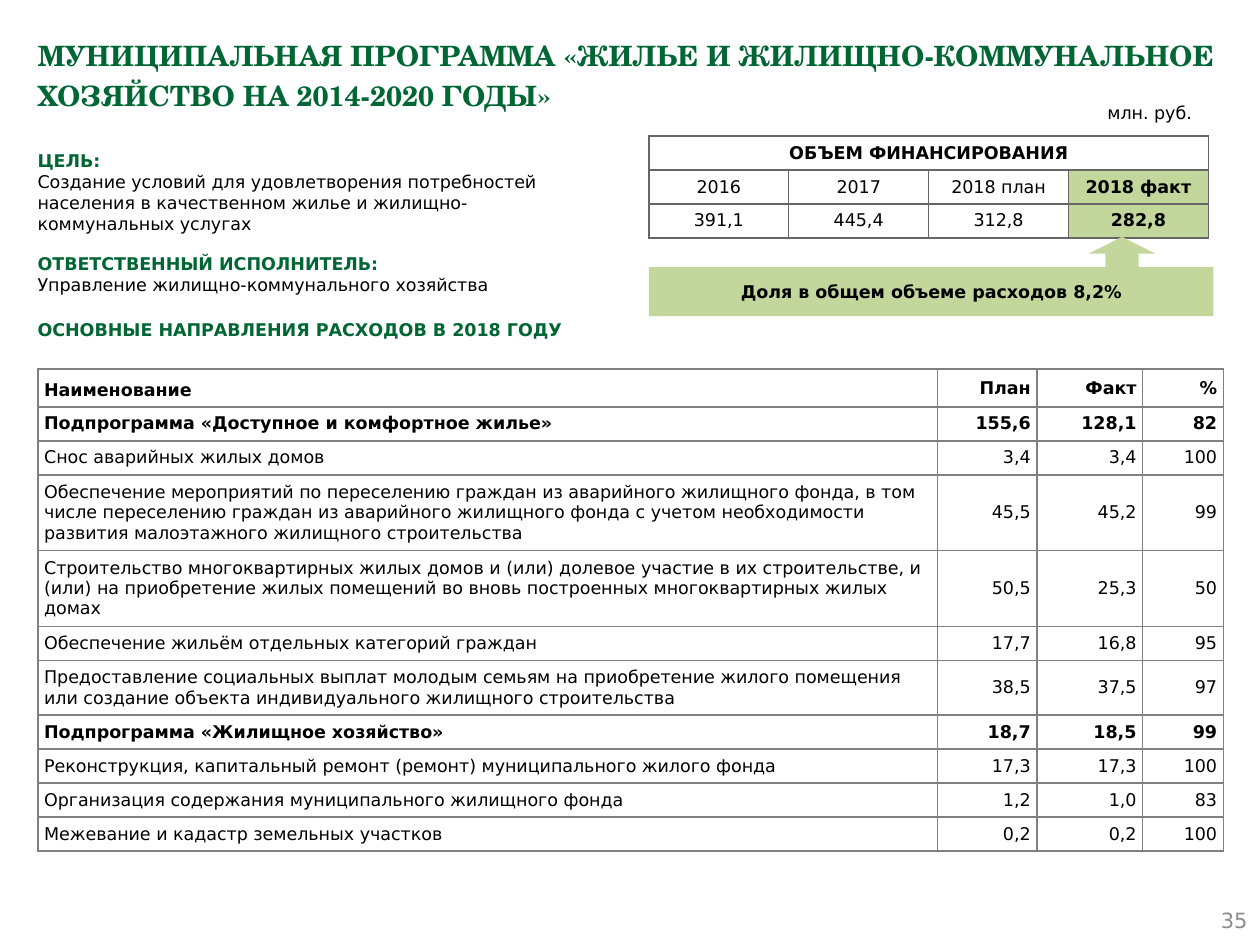
import pptx
import pptx.dml.color
import pptx.enum.shapes
import pptx.enum.text
import pptx.oxml.ns
import pptx.util
from lxml import etree

Inches = pptx.util.Inches
Pt = pptx.util.Pt
RGBColor = pptx.dml.color.RGBColor
SHAPE = pptx.enum.shapes.MSO_SHAPE
ALIGN = pptx.enum.text.PP_ALIGN
ANCHOR = pptx.enum.text.MSO_ANCHOR
qn = pptx.oxml.ns.qn

GREEN = RGBColor(0x00, 0x66, 0x33)
LIGHT_GREEN = RGBColor(0xC3, 0xD6, 0x9B)
BLACK = RGBColor(0x00, 0x00, 0x00)
PAGE_GREY = RGBColor(0x8C, 0x8C, 0x8C)
FUNDING_BORDER = RGBColor(0x66, 0x66, 0x66)
SPENDING_BORDER = RGBColor(0x80, 0x80, 0x80)

FUNDING = [
    ["ОБЪЕМ ФИНАНСИРОВАНИЯ", "", "", ""],
    ["2016", "2017", "2018 план", "2018 факт"],
    ["391,1", "445,4", "312,8", "282,8"],
]

SPENDING = [
    ("Наименование", "План", "Факт", "%"),
    ("Подпрограмма «Доступное и комфортное жилье»", "155,6", "128,1", "82"),
    ("Снос аварийных жилых домов", "3,4", "3,4", "100"),
    ("Обеспечение мероприятий по переселению граждан из аварийного жилищного фонда, "
     "в том числе переселению граждан из аварийного жилищного фонда с учетом "
     "необходимости развития малоэтажного жилищного строительства", "45,5", "45,2", "99"),
    ("Строительство многоквартирных жилых домов и (или) долевое участие в их "
     "строительстве, и (или) на приобретение жилых помещений во вновь построенных "
     "многоквартирных жилых домах", "50,5", "25,3", "50"),
    ("Обеспечение жильём отдельных категорий граждан", "17,7", "16,8", "95"),
    ("Предоставление социальных выплат молодым семьям на приобретение жилого помещения "
     "или создание объекта индивидуального жилищного строительства", "38,5", "37,5", "97"),
    ("Подпрограмма «Жилищное хозяйство»", "18,7", "18,5", "99"),
    ("Реконструкция, капитальный ремонт (ремонт) муниципального жилого фонда",
     "17,3", "17,3", "100"),
    ("Организация содержания муниципального жилищного фонда", "1,2", "1,0", "83"),
    ("Межевание и кадастр земельных участков", "0,2", "0,2", "100"),
]
SPENDING_HEIGHTS = [0.3, 0.27, 0.27, 0.6, 0.6, 0.27, 0.43, 0.27, 0.27, 0.27, 0.27]


class SlideBuilder:
    font_name = "DejaVu Sans"
    title_font = "TeX Gyre Schola"
    font_size = 10

    def __init__(self, deck):
        self.page = deck.slides.add_slide(deck.slide_layouts[5])

    def format(self, paragraph, color=BLACK, bold=False, align=ALIGN.LEFT,
               size=None, name=None, spacing=1.0):
        paragraph.alignment = align
        paragraph.line_spacing = spacing
        font = paragraph.font
        font.name = name or self.font_name
        font.size = Pt(size or self.font_size)
        font.bold = bold
        font.color.rgb = color

    def title(self, text, left, top, width, height):
        box = self.page.shapes.title
        box.left, box.top = Inches(left), Inches(top)
        box.width, box.height = Inches(width), Inches(height)
        frame = box.text_frame
        frame.text = text
        frame.auto_size = pptx.enum.text.MSO_AUTO_SIZE.NONE
        frame.vertical_anchor = ANCHOR.TOP
        self.format(frame.paragraphs[0], GREEN, True, size=16,
                    name=self.title_font, spacing=1.2)

    def text(self, lines, left, top, width, height, anchor=ANCHOR.TOP, wrap=True):
        """Add a text box; each line is a text with its paragraph style."""
        box = self.page.shapes.add_textbox(
            Inches(left), Inches(top), Inches(width), Inches(height))
        frame = box.text_frame
        frame.word_wrap = wrap
        frame.vertical_anchor = anchor
        for index, (text, style) in enumerate(lines):
            paragraph = frame.add_paragraph() if index else frame.paragraphs[0]
            paragraph.text = text
            self.format(paragraph, **style)
        return box

    def shape(self, kind, left, top, width, height, fill=None, text="",
              adjustments=(), **style):
        shape = self.page.shapes.add_shape(
            kind, Inches(left), Inches(top), Inches(width), Inches(height))
        shape.shadow.inherit = False
        shape.line.fill.background()
        for index, value in enumerate(adjustments):
            shape.adjustments[index] = value
        if fill is None:
            shape.fill.background()
        else:
            shape.fill.solid()
            shape.fill.fore_color.rgb = fill
        if text:
            shape.text_frame.text = text
            shape.text_frame.vertical_anchor = ANCHOR.MIDDLE
            self.format(shape.text_frame.paragraphs[0], **style)

    def border(self, cell, color):
        properties = cell._tc.get_or_add_tcPr()
        for side in ("a:lnL", "a:lnR", "a:lnT", "a:lnB"):
            line = etree.SubElement(properties, qn(side), w=str(Pt(1)))
            fill = etree.SubElement(line, qn("a:solidFill"))
            etree.SubElement(fill, qn("a:srgbClr"), val=str(color))

    def table(self, rows, left, top, widths, heights, border, style_for):
        """Add a table; style_for(row, column) gives a cell's fill and text style."""
        table = self.page.shapes.add_table(
            len(rows), len(widths), Inches(left), Inches(top),
            Inches(sum(widths)), Inches(sum(heights))).table
        table.first_row = table.horz_banding = False
        for column, width in zip(table.columns, widths):
            column.width = Inches(width)
        for r, (values, height) in enumerate(zip(rows, heights)):
            table.rows[r].height = Inches(height)
            for c, value in enumerate(values):
                cell = table.cell(r, c)
                fill, style = style_for(r, c)
                cell.text = value
                cell.vertical_anchor = ANCHOR.MIDDLE
                cell.margin_left = cell.margin_right = Inches(0.05)
                cell.margin_top = cell.margin_bottom = Inches(0.05)
                self.format(cell.text_frame.paragraphs[0], **style)
                self.border(cell, border)
                if fill is None:
                    cell.fill.background()
                else:
                    cell.fill.solid()
                    cell.fill.fore_color.rgb = fill
        return table


def funding_style(row, column):
    is_fact = row > 0 and column == 3
    return (LIGHT_GREEN if is_fact else None,
            dict(bold=row == 0 or is_fact, align=ALIGN.CENTER))


def spending_style(row, column):
    is_heading = row == 0 or SPENDING[row][0].startswith("Подпрограмма")
    return None, dict(bold=is_heading,
                      align=ALIGN.RIGHT if column else ALIGN.LEFT,
                      spacing=1.2 if row == column == 0 else 1.0)


def main():
    deck = pptx.Presentation()
    deck.slide_width, deck.slide_height = Inches(10), Inches(7.5)
    slide = SlideBuilder(deck)

    slide.title("МУНИЦИПАЛЬНАЯ ПРОГРАММА «ЖИЛЬЕ И ЖИЛИЩНО-КОММУНАЛЬНОЕ "
                "ХОЗЯЙСТВО НА 2014-2020 ГОДЫ»", 0.2, 0.2, 9.61, 0.79)
    slide.text([("35", dict(color=PAGE_GREY, size=12, align=ALIGN.RIGHT))],
               7.67, 7.1, 2.33, 0.4, ANCHOR.MIDDLE)

    heading = dict(color=GREEN, bold=True, spacing=1.2)
    goal = slide.text([
        ("ЦЕЛЬ:", heading),
        ("Создание условий для удовлетворения потребностей населения в качественном "
         "жилье и жилищно-коммунальных услугах", {}),
        ("ОТВЕТСТВЕННЫЙ ИСПОЛНИТЕЛЬ:", heading),
        ("Управление жилищно-коммунального хозяйства", {}),
    ], 0.2, 1.11, 4.5, 1.3)
    goal.text_frame.paragraphs[2].space_before = Pt(8.4)

    funding = slide.table(FUNDING, 5.15, 1.08, [1.11] * 4, [0.27] * 3,
                          FUNDING_BORDER, funding_style)
    funding.cell(0, 0).merge(funding.cell(0, 3))

    slide.shape(SHAPE.PENTAGON, 0.2, 2.4, 4.43, 0.43, adjustments=[0],
                text="ОСНОВНЫЕ НАПРАВЛЕНИЯ РАСХОДОВ В 2018 ГОДУ", color=GREEN, bold=True)
    slide.table(SPENDING, 0.3, 2.93, [7.14, 0.79, 0.84, 0.64], SPENDING_HEIGHTS,
                SPENDING_BORDER, spending_style)
    slide.text([("млн. руб.", {})], 8.69, 0.76, 0.88, 0.27, wrap=False)
    slide.shape(SHAPE.RECTANGLE, 5.15, 2.12, 4.48, 0.39, LIGHT_GREEN,
                "Доля в общем объеме расходов 8,2%", bold=True, align=ALIGN.CENTER)
    slide.shape(SHAPE.UP_ARROW, 8.64, 1.88, 0.53, 0.38, LIGHT_GREEN,
                adjustments=[0.5, 0.35])

    deck.save("out.pptx")


if __name__ == "__main__":
    main()
